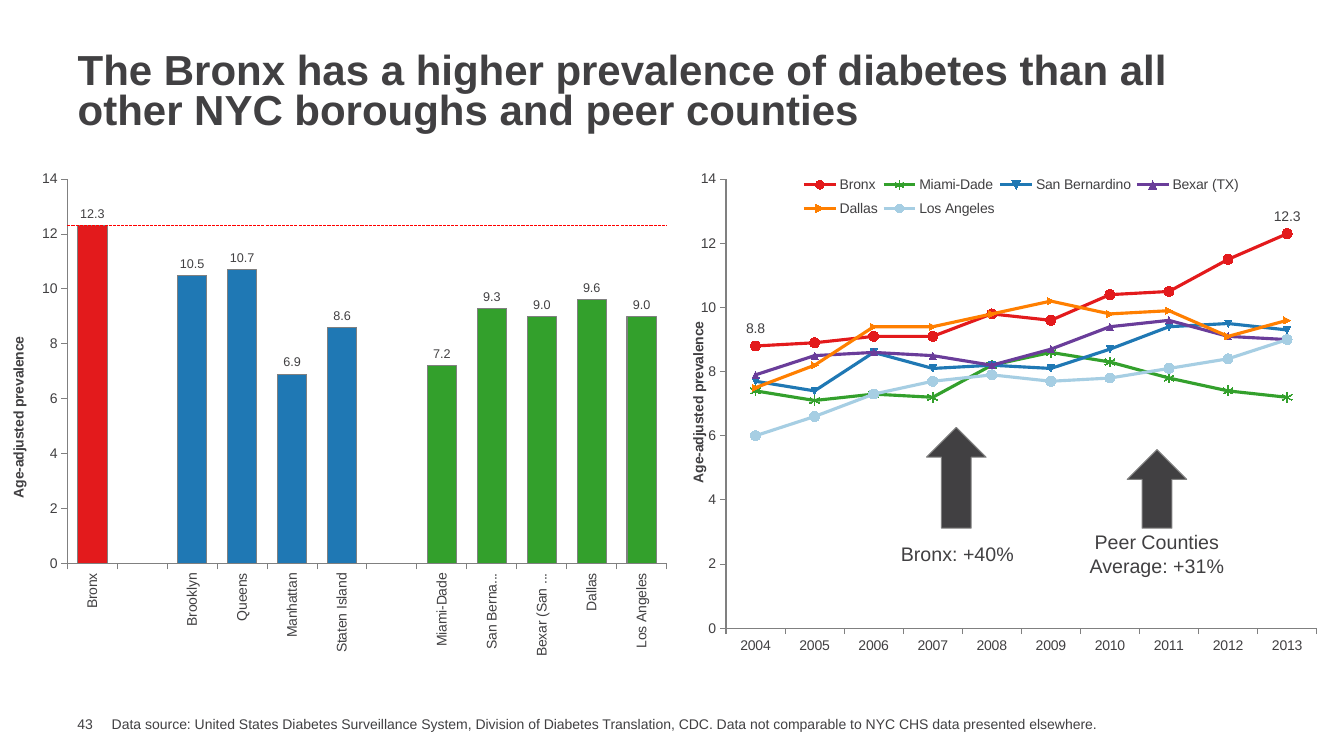
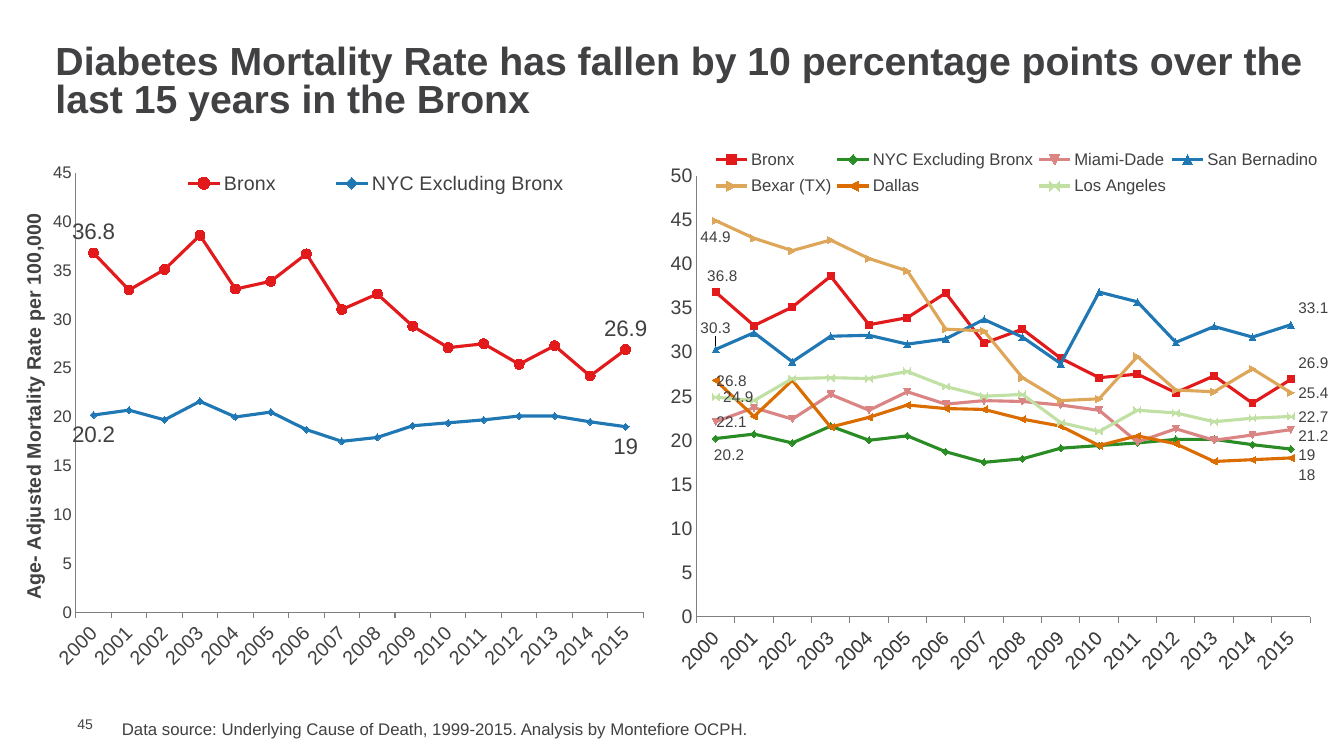
"""Build two slides comparing diabetes prevalence and mortality in the Bronx."""
import pptx
import pptx.chart.data
import pptx.dml.color
import pptx.enum.chart
import pptx.enum.shapes
import pptx.enum.text
import pptx.oxml
import pptx.oxml.ns
import pptx.util

SLIDE_WIDTH = pptx.util.Inches(13.33)
SLIDE_HEIGHT = pptx.util.Inches(7.5)
FONT = "Arial"
COLORS = {
    "text": "414042", "outline": "808080", "target": "FF0000",
    "red": "E31A1C", "green": "33A02C", "blue": "1F78B4", "purple": "6A3D9A",
    "orange": "FF7F00", "pale blue": "A6CEE3", "dark green": "2A8C24",
    "rose": "DA8483", "tan": "DDA659", "dark orange": "DB6D00", "pale green": "C0E0A4",
}
ABOVE = pptx.enum.chart.XL_LABEL_POSITION.ABOVE
BELOW = pptx.enum.chart.XL_LABEL_POSITION.BELOW
RIGHT = pptx.enum.chart.XL_LABEL_POSITION.RIGHT
CIRCLE = pptx.enum.chart.XL_MARKER_STYLE.CIRCLE
STAR = pptx.enum.chart.XL_MARKER_STYLE.STAR
AUTO = pptx.enum.chart.XL_MARKER_STYLE.AUTOMATIC

PREVALENCE_YEARS = [str(year) for year in range(2004, 2014)]
PREVALENCE = [
    ("Bronx", [8.8, 8.9, 9.1, 9.1, 9.8, 9.6, 10.4, 10.5, 11.5, 12.3], "red", CIRCLE),
    ("Miami-Dade", [7.4, 7.1, 7.3, 7.2, 8.2, 8.6, 8.3, 7.8, 7.4, 7.2], "green", STAR),
    ("San Bernardino", [7.7, 7.4, 8.6, 8.1, 8.2, 8.1, 8.7, 9.4, 9.5, 9.3], "blue", AUTO),
    ("Bexar (TX)", [7.9, 8.5, 8.6, 8.5, 8.2, 8.7, 9.4, 9.6, 9.1, 9], "purple", AUTO),
    ("Dallas", [7.5, 8.2, 9.4, 9.4, 9.8, 10.2, 9.8, 9.9, 9.1, 9.6], "orange", AUTO),
    ("Los Angeles", [6, 6.6, 7.3, 7.7, 7.9, 7.7, 7.8, 8.1, 8.4, 9], "pale blue", CIRCLE),
]
PLACES = [
    ("Bronx", 12.3, "red"), ("", None, None),
    ("Brooklyn", 10.5, "blue"), ("Queens", 10.7, "blue"),
    ("Manhattan", 6.9, "blue"), ("Staten Island", 8.6, "blue"), ("", None, None),
    ("Miami-Dade", 7.2, "green"), ("San Bernadino", 9.3, "green"),
    ("Bexar (San Antonio)", 9, "green"), ("Dallas", 9.6, "green"),
    ("Los Angeles", 9, "green"),
]
MORTALITY_YEARS = [str(year) for year in range(2000, 2016)]
BRONX_DEATHS = [36.8, 33, 35.1, 38.6, 33.1, 33.9, 36.7, 31,
                32.6, 29.3, 27.1, 27.5, 25.4, 27.3, 24.2, 26.9]
CITY_DEATHS = [20.2, 20.7, 19.7, 21.6, 20, 20.5, 18.7, 17.5,
               17.9, 19.1, 19.4, 19.7, 20.1, 20.1, 19.5, 19]
CITY_MORTALITY = [
    ("Bronx", BRONX_DEATHS, "red", CIRCLE),
    ("NYC Excluding Bronx", CITY_DEATHS, "blue", AUTO),
]
PEER_MORTALITY = [
    ("Bronx", BRONX_DEATHS, "red", AUTO),
    ("NYC Excluding Bronx", CITY_DEATHS, "dark green", AUTO),
    ("Miami-Dade", [22.1, 23.7, 22.4, 25.2, 23.4, 25.5, 24.1, 24.5,
                    24.4, 24, 23.4, 19.8, 21.3, 20, 20.6, 21.2], "rose", AUTO),
    ("San Bernadino", [30.3, 32.2, 28.9, 31.8, 31.9, 30.9, 31.5, 33.7,
                       31.7, 28.7, 36.8, 35.7, 31.1, 32.9, 31.7, 33.1], "blue", AUTO),
    ("Bexar (TX)", [44.9, 42.9, 41.5, 42.7, 40.6, 39.2, 32.6, 32.4,
                    27.1, 24.5, 24.7, 29.5, 25.7, 25.5, 28.1, 25.4], "tan", AUTO),
    ("Dallas", [26.8, 22.7, 26.8, 21.5, 22.6, 24, 23.6, 23.5,
                22.4, 21.6, 19.4, 20.5, 19.6, 17.6, 17.8, 18], "dark orange", AUTO),
    ("Los Angeles", [24.9, 24.5, 27, 27.1, 27, 27.8, 26.1, 25,
                     25.2, 22, 21, 23.4, 23.1, 22.1, 22.5, 22.7], "pale green", AUTO),
]
PEER_LABELS = [
    ((ABOVE, 0.01, 0), (RIGHT, 0, -0.03)),
    ((BELOW, 0.02, 0), (RIGHT, 0, 0.01)),
    ((RIGHT, -0.01, 0), (RIGHT, 0, 0.01)),
    ((ABOVE, 0, -0.01), (RIGHT, 0, -0.03)),
    ((BELOW, 0, 0), (RIGHT, 0, 0)),
    ((RIGHT, -0.01, 0), (RIGHT, 0, 0.03)),
    ((RIGHT, 0, 0), (RIGHT, 0, 0)),
]


def color(name):
    return pptx.dml.color.RGBColor.from_string(COLORS[name])


def place(left, top, width, height):
    """Turn percentages of the slide's size into lengths."""
    return (int(SLIDE_WIDTH * left / 100), int(SLIDE_HEIGHT * top / 100),
            int(SLIDE_WIDTH * width / 100), int(SLIDE_HEIGHT * height / 100))


def set_font(font, size, bold=False):
    font.name = FONT
    font.size = pptx.util.Pt(size)
    font.bold = bold
    font.color.rgb = color("text")


def set_line(line, name, width=0.75):
    line.color.rgb = color(name)
    line.width = pptx.util.Pt(width)


def chart_xml(text):
    namespaces = pptx.oxml.ns.nsdecls("c", "a")
    return pptx.oxml.parse_xml(f"<c:root {namespaces}>{text}</c:root>")[0]


def set_layout(parent, index, mode="edge", target=None, **lengths):
    """Give a chart part a manual layout in shares of the chart."""
    for layout in parent.xpath("./c:layout"):
        parent.remove(layout)
    parts = [f'<c:layoutTarget val="{target}"/>'] if target else []
    parts += [f'<c:{axis}Mode val="{mode}"/>' for axis in "xy"]
    parts += [f'<c:{name} val="{value}"/>' for name, value in lengths.items()]
    parent.insert(index, chart_xml(
        f'<c:layout><c:manualLayout>{"".join(parts)}</c:manualLayout></c:layout>'))


def add_text(slide, area, text, size, centered=False):
    box = slide.shapes.add_textbox(*place(*area))
    box.text_frame.word_wrap = True
    paragraph = box.text_frame.paragraphs[0]
    paragraph.text = text
    if centered:
        paragraph.alignment = pptx.enum.text.PP_ALIGN.CENTER
    set_font(paragraph.font, size)
    return box


def add_slide(presentation, title, title_area, title_size, number):
    slide = presentation.slides.add_slide(presentation.slide_layouts[5])
    shape = slide.shapes.title
    shape.left, shape.top, shape.width, shape.height = place(*title_area)
    frame = shape.text_frame
    frame.word_wrap = True
    frame.auto_size = pptx.enum.text.MSO_AUTO_SIZE.NONE
    frame.vertical_anchor = pptx.enum.text.MSO_ANCHOR.MIDDLE
    paragraph = frame.paragraphs[0]
    paragraph.text = title
    paragraph.alignment = pptx.enum.text.PP_ALIGN.LEFT
    paragraph.line_spacing = 0.8
    set_font(paragraph.font, title_size, bold=True)
    frame = add_text(slide, (5.03, 94.67, 3.23, 2.27), number, 10).text_frame
    frame.margin_top = frame.margin_right = frame.margin_bottom = 0
    frame.vertical_anchor = pptx.enum.text.MSO_ANCHOR.MIDDLE
    return slide


def add_chart(slide, area, kind, categories, series, plot, maximum, step,
              sizes=(10, 10), rotation=0, ticks=True):
    """Add a chart with plain axes; sizes are for categories and values."""
    data = pptx.chart.data.CategoryChartData()
    data.categories = categories
    for name, values in series:
        data.add_series(name, values)
    chart = slide.shapes.add_chart(kind, *place(*area), data).chart
    chart.has_title = chart.has_legend = False
    set_font(chart.font, 10)
    chart.plots[0].vary_by_categories = False
    value_axis = chart.value_axis
    value_axis.minimum_scale, value_axis.maximum_scale = 0, maximum
    value_axis.major_unit = step
    value_axis.has_major_gridlines = False
    marks = pptx.enum.chart.XL_TICK_MARK
    value_axis.major_tick_mark = marks.OUTSIDE if ticks else marks.NONE
    chart.category_axis.major_tick_mark = marks.OUTSIDE
    for axis, size in zip((chart.category_axis, value_axis), sizes):
        axis.minor_tick_mark = marks.NONE
        set_line(axis.format.line, "outline")
        set_font(axis.tick_labels.font, size)
    body = chart.element.xpath("//c:catAx/c:txPr/a:bodyPr")[0]
    body.set("rot", str(rotation * 60000))
    body.set("vert", "horz")
    set_layout(chart.element.xpath("//c:plotArea")[0], 0, target="inner",
               **dict(zip("xywh", plot)))
    return chart


def add_axis_title(chart, text, size, left, top):
    title = chart.value_axis.axis_title
    title.text_frame.text = text
    set_font(title.text_frame.paragraphs[0].font, size, bold=True)
    element = chart.element.xpath("//c:valAx/c:title")[0]
    body = element.xpath(".//a:bodyPr")[0]
    body.set("rot", "-5400000")
    body.set("vert", "horz")
    set_layout(element, 1, x=left, y=top)


def add_line_chart(slide, area, years, rows, legend, legend_size, **options):
    chart = add_chart(slide, area, pptx.enum.chart.XL_CHART_TYPE.LINE_MARKERS,
                      years, [row[:2] for row in rows], **options)
    for series, (_, _, name, marker) in zip(chart.plots[0].series, rows):
        series.smooth = False
        set_line(series.format.line, name, 2.25)
        series.marker.style = marker
        series.marker.size = 5 if marker == AUTO else 7
        series.marker.format.fill.solid()
        series.marker.format.fill.fore_color.rgb = color(name)
        set_line(series.marker.format.line, name)
    chart.has_legend = True
    chart.legend.position = pptx.enum.chart.XL_LEGEND_POSITION.TOP
    chart.legend.include_in_layout = False
    set_font(chart.legend.font, legend_size)
    set_layout(chart.element.xpath("//c:legend")[0], 1, **dict(zip("xywh", legend)))
    return chart


def label_ends(series, size, ends):
    """Label the first and last point; each end is position, x and y shift."""
    series.data_labels.show_value = False
    last = len(list(series.values)) - 1
    for index, (position, x, y) in zip((0, last), ends):
        label = series.points[index].data_label
        set_font(label.font, size)
        label.position = position
        if x or y:
            element = series.data_labels._element.xpath(
                f"./c:dLbl[c:idx/@val={index}]")[0]
            set_layout(element, 1, mode="factor", x=x, y=y)


def add_target_line(chart):
    """Turn the second series into an unseen line with a dashed trend line."""
    bars = chart.element.xpath("//c:barChart")[0]
    target = bars.xpath("./c:ser")[1]
    for element in target.xpath("./c:invertIfNegative | ./c:spPr"):
        target.remove(element)
    lines = chart_xml('<c:lineChart><c:grouping val="standard"/>'
                      '<c:varyColors val="0"/><c:marker val="1"/></c:lineChart>')
    bars.addnext(lines)
    lines.insert(2, target)
    for axis in bars.xpath("./c:axId"):
        lines.append(chart_xml(f'<c:axId val="{axis.get("val")}"/>'))
    categories = target.xpath("./c:cat")[0]
    for text in (
        '<c:spPr><a:ln><a:noFill/></a:ln></c:spPr>',
        '<c:marker><c:symbol val="none"/></c:marker>',
        f'<c:trendline><c:spPr><a:ln w="9525"><a:solidFill><a:srgbClr '
        f'val="{COLORS["target"]}"/></a:solidFill><a:prstDash val="sysDash"/></a:ln>'
        '</c:spPr><c:trendlineType val="linear"/><c:forward val="0.5"/>'
        '<c:backward val="0.5"/><c:dispRSqr val="0"/><c:dispEq val="0"/></c:trendline>',
    ):
        categories.addprevious(chart_xml(text))
    target.append(chart_xml('<c:smooth val="0"/>'))


def add_place_chart(slide):
    names, values, fills = zip(*PLACES)
    targets = [value and values[0] for value in values]
    chart = add_chart(slide, (0, 21.07, 50.11, 66),
                      pptx.enum.chart.XL_CHART_TYPE.COLUMN_CLUSTERED, names,
                      [("Series 1", values), ("Series 2", targets)],
                      plot=(0.1, 0.04, 0.89, 0.77), maximum=14, step=2, rotation=-90)
    add_axis_title(chart, "Age-adjusted prevalence", 10, 0.01, 0.35)
    add_target_line(chart)
    plot = chart.plots[0]
    plot.gap_width = 70
    series = plot.series[0]
    for index, name in enumerate(fills):
        if name:
            bar = series.points[index].format
            bar.fill.solid()
            bar.fill.fore_color.rgb = color(name)
            set_line(bar.line, "outline")
    labels = series.data_labels
    labels.show_value = True
    labels.number_format = "#,##0.0"
    labels.number_format_is_linked = False
    labels.position = pptx.enum.chart.XL_LABEL_POSITION.OUTSIDE_END
    set_font(labels.font, 9)


def add_arrow(slide, area):
    arrow = slide.shapes.add_shape(pptx.enum.shapes.MSO_SHAPE.UP_ARROW, *place(*area))
    arrow.shadow.inherit = False
    arrow.fill.solid()
    arrow.fill.fore_color.rgb = color("text")
    set_line(arrow.line, "outline")


def build_prevalence(presentation):
    slide = add_slide(
        presentation, "The Bronx has a higher prevalence of diabetes than all other "
        "NYC boroughs and peer counties", (5.03, 6.27, 90.02, 12.13), 30, "43")
    add_text(slide, (7.58, 94, 75.32, 3.6), "Data source: United States Diabetes "
             "Surveillance System, Division of Diabetes Translation, CDC. Data not "
             "comparable to NYC CHS data presented elsewhere.", 10)
    chart = add_line_chart(slide, (50.11, 21.07, 48.84, 66), PREVALENCE_YEARS, PREVALENCE,
                           (0.19, 0.02, 0.68, 0.11), 10, plot=(0.08, 0.04, 0.9, 0.9),
                           maximum=14, step=2)
    add_axis_title(chart, "Age-adjusted prevalence", 10, 0.02, 0.32)
    label_ends(chart.plots[0].series[0], 10, [(ABOVE, 0, 0)] * 2)
    add_place_chart(slide)
    add_arrow(slide, (68.94, 56.53, 4.43, 13.33))
    add_text(slide, (63.77, 71.07, 14.93, 4.53), "Bronx: +40%", 14, centered=True)
    add_arrow(slide, (83.87, 59.47, 4.43, 10.4))
    add_text(slide, (78.69, 69.47, 14.78, 7.6), "Peer Counties Average: +31%", 14,
             centered=True)


def build_mortality(presentation):
    slide = add_slide(
        presentation, "Diabetes Mortality Rate has fallen by 10 percentage points over "
        "the last 15 years in the Bronx", (3.38, 5.33, 95.5, 11.33), 28, "45")
    add_text(slide, (8.33, 94.4, 72.84, 4), "Data source: Underlying Cause of Death, "
             "1999-2015. Analysis by Montefiore OCPH.", 12)
    shared = {"step": 5, "rotation": -45, "ticks": False}
    city = add_line_chart(slide, (0.3, 20.8, 48.54, 69.2), MORTALITY_YEARS, CITY_MORTALITY,
                          (0.2, 0.02, 0.74, 0.06), 14, plot=(0.11, 0.03, 0.87, 0.84),
                          maximum=45, sizes=(14, 12), **shared)
    add_axis_title(city, "Age- Adjusted Mortality Rate per 100,000", 14, 0.02, 0.1)
    for series, position in zip(city.plots[0].series, (ABOVE, BELOW)):
        label_ends(series, 16, [(position, 0, 0)] * 2)
    peers = add_line_chart(slide, (48.31, 17.33, 50.56, 73.87), MORTALITY_YEARS,
                           PEER_MORTALITY, (0.09, 0.02, 0.91, 0.11), 12,
                           plot=(0.07, 0.08, 0.91, 0.79), maximum=50, sizes=(14, 14),
                           **shared)
    for series, ends in zip(peers.plots[0].series, PEER_LABELS):
        label_ends(series, 11, ends)


def main():
    presentation = pptx.Presentation()
    presentation.slide_width, presentation.slide_height = SLIDE_WIDTH, SLIDE_HEIGHT
    build_prevalence(presentation)
    build_mortality(presentation)
    presentation.save("out.pptx")


if __name__ == "__main__":
    main()
